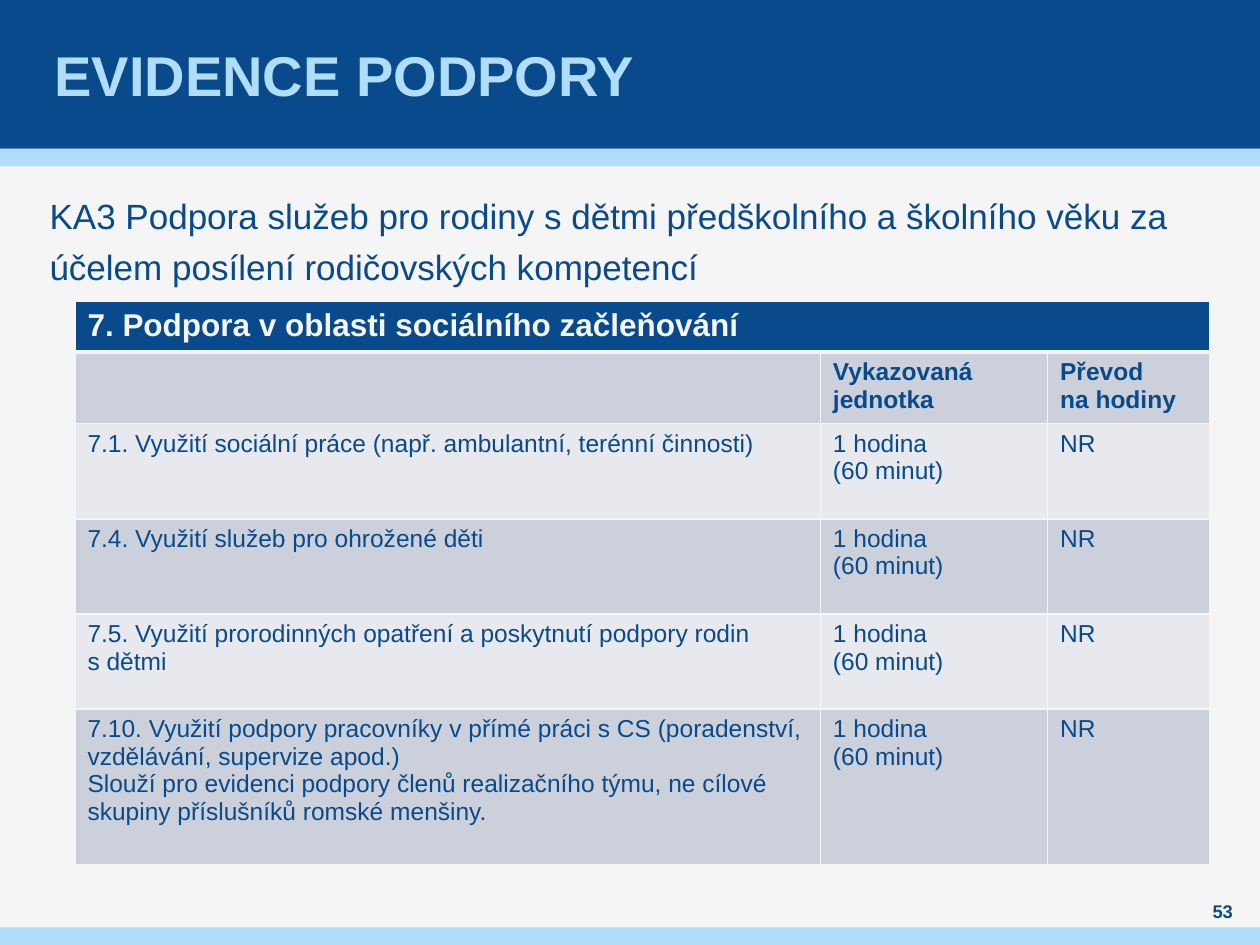
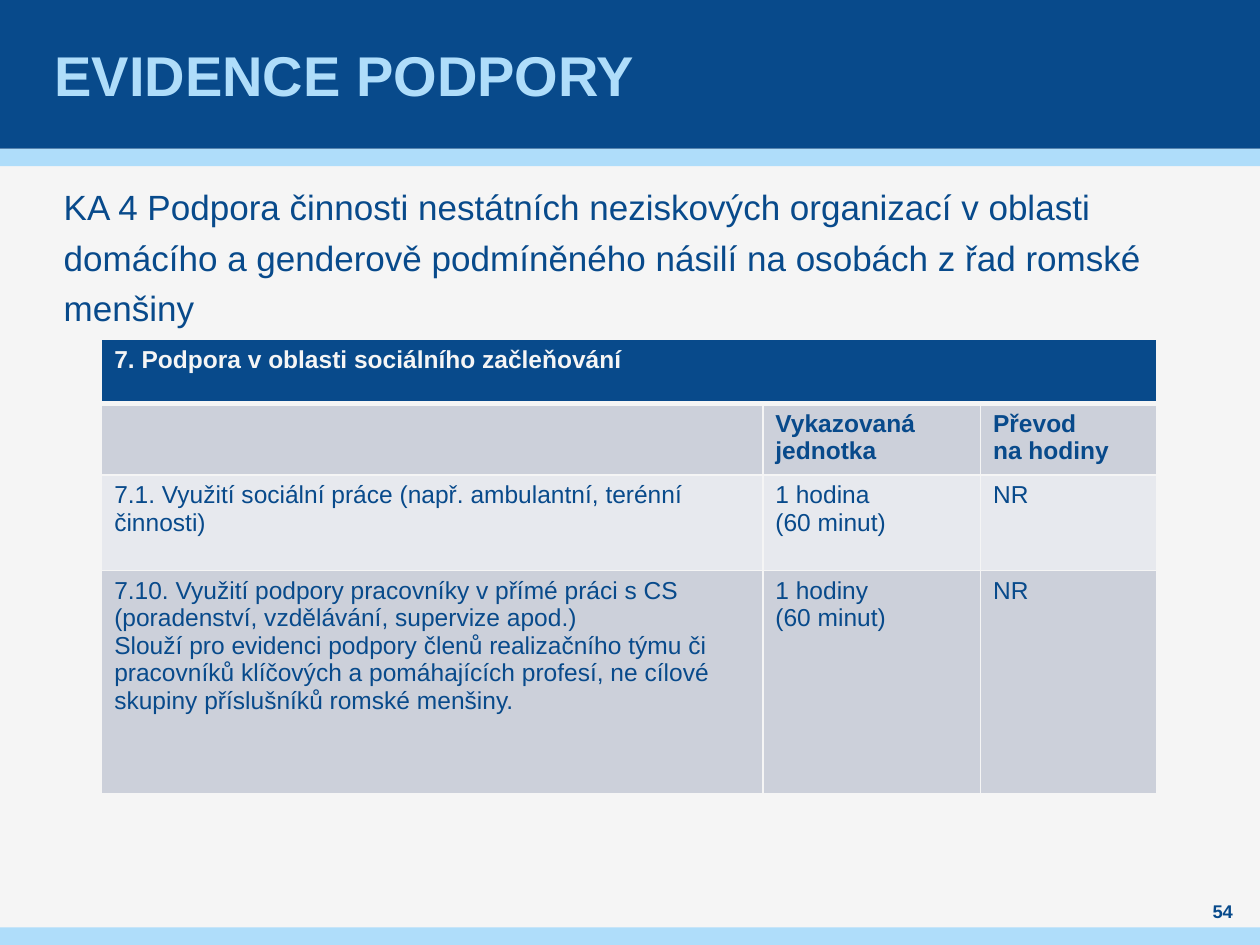
from dataclasses import dataclass

from lxml.etree import SubElement
from pptx import Presentation
from pptx.dml.color import RGBColor
from pptx.enum.shapes import MSO_SHAPE
from pptx.enum.text import MSO_ANCHOR, PP_ALIGN
from pptx.oxml.ns import qn
from pptx.util import Pt


@dataclass(frozen=True)
class Theme:
    navy: str = "084A8B"
    sky: str = "AFDDFA"
    paper: str = "F5F5F5"
    row_dark: str = "CCD0DA"
    row_light: str = "E7E9EE"
    font: str = "Arial"
    title_size: float = 32
    intro_size: float = 20
    cell_size: float = 14
    number_size: float = 10.5
    thin: float = 1
    thick: float = 3


THEME = Theme()
SLIDE_W, SLIDE_H = 720, 540
HEADER_H, STRIPE_H = 85, 10

HEADINGS = ("", "Vykazovaná jednotka", "Převod\vna hodiny")
HOUR = "1 hodina\v(60 minut)"
SUPPORT_AREA = "7. Podpora v oblasti sociálního začleňování"
SOCIAL_WORK = "7.1. Využití sociální práce (např. ambulantní, terénní činnosti)"
STAFF_SUPPORT = ("7.10. Využití podpory pracovníky v přímé práci s CS "
                 "(poradenství, vzdělávání, supervize apod.)\n"
                 "Slouží pro evidenci podpory členů realizačního týmu")

# Boxes are left, top, width; table widths and heights are per column and row
SLIDES = [
    dict(
        number=53,
        intro="KA3 Podpora služeb pro rodiny s dětmi předškolního a školního "
              "věku za účelem posílení rodičovských kompetencí",
        intro_box=(28.3, 106.5, 649.5),
        table_at=(42.8, 172.4),
        widths=(426, 129.8, 92.9),
        heights=(27, 38.6, 54.4, 54.4, 54.4, 89),
        area_size=18,
        records=[
            (SOCIAL_WORK, HOUR, "NR"),
            ("7.4. Využití služeb pro ohrožené děti", HOUR, "NR"),
            ("7.5. Využití prorodinných opatření a poskytnutí podpory rodin\v"
             "s dětmi", HOUR, "NR"),
            (STAFF_SUPPORT + ", ne cílové skupiny příslušníků romské menšiny.",
             HOUR, "NR"),
        ],
    ),
    dict(
        number=54,
        intro="KA 4 Podpora činnosti nestátních neziskových organizací v oblasti "
              "domácího a genderově podmíněného násilí na osobách z řad romské "
              "menšiny",
        intro_box=(36.4, 101.3, 641),
        table_at=(58.1, 194),
        widths=(377.8, 124.4, 100.6),
        heights=(36.7, 38.6, 54.6, 127.5),
        area_size=14,
        records=[
            (SOCIAL_WORK, HOUR, "NR"),
            (STAFF_SUPPORT + " či pracovníků klíčových a pomáhajících profesí, "
             "ne cílové skupiny příslušníků romské menšiny.",
             "1 hodiny\v(60 minut)", "NR"),
        ],
    ),
]


def color(value):
    return RGBColor.from_string(value)


def style(paragraph, size, ink, bold=False):
    font = paragraph.font
    font.name, font.size, font.bold = THEME.font, Pt(size), bold
    font.color.rgb = color(ink)


def set_margins(frame, side=0):
    frame.margin_left = frame.margin_right = Pt(side)
    frame.margin_top = frame.margin_bottom = 0


def add_text(slide, box, text):
    frame = slide.shapes.add_textbox(*map(Pt, box)).text_frame
    frame.word_wrap = True
    set_margins(frame)
    frame.text = text
    return frame


def add_band(slide, top, height, fill):
    band = slide.shapes.add_shape(MSO_SHAPE.RECTANGLE, 0, Pt(top),
                                  Pt(SLIDE_W), Pt(height))
    band.shadow.inherit = False
    band.fill.solid()
    band.fill.fore_color.rgb = color(fill)
    band.line.fill.background()


def add_frame(slide, number):
    """Background, bands, title and slide number."""
    slide.background.fill.solid()
    slide.background.fill.fore_color.rgb = color(THEME.paper)
    add_band(slide, HEADER_H, STRIPE_H, THEME.sky)
    add_band(slide, 0, HEADER_H, THEME.navy)
    add_band(slide, SLIDE_H - STRIPE_H, STRIPE_H, THEME.sky)

    # Title, brought in front of the header band
    title = slide.shapes.title
    title.element.getparent().append(title.element)
    title.left, title.top, title.width, title.height = map(
        Pt, (28.3, 0, 663, HEADER_H))
    frame = title.text_frame
    frame.text = "EVIDENCE PODPORY"
    frame.vertical_anchor = MSO_ANCHOR.MIDDLE
    set_margins(frame, 2.8)
    frame.paragraphs[0].alignment = PP_ALIGN.LEFT
    style(frame.paragraphs[0], THEME.title_size, THEME.sky, bold=True)

    # Slide number
    frame = add_text(slide, (680.3, 513.3, 36.9, 14.2), str(number))
    frame.vertical_anchor = MSO_ANCHOR.MIDDLE
    frame.paragraphs[0].alignment = PP_ALIGN.CENTER
    style(frame.paragraphs[0], THEME.number_size, THEME.navy, bold=True)


def add_intro(slide, box, text):
    paragraph = add_text(slide, box, text).paragraphs[0]
    paragraph.line_spacing = Pt(28.8)
    paragraph.space_before = paragraph.space_after = Pt(6)
    style(paragraph, THEME.intro_size, THEME.navy)


def set_borders(cell, top, bottom):
    properties = cell._tc.get_or_add_tcPr()
    sides = dict(lnL=THEME.thin, lnR=THEME.thin, lnT=top, lnB=bottom)
    for side, width in sides.items():
        line = SubElement(properties, qn(f"a:{side}"), w=str(Pt(width)))
        SubElement(SubElement(line, qn("a:solidFill")), qn("a:srgbClr"),
                   val=THEME.paper)


def add_record_table(slide, at, widths, heights, area_size, records):
    rows = [(SUPPORT_AREA, "", ""), HEADINGS, *records]
    box = (*at, sum(widths), sum(heights))
    table = slide.shapes.add_table(len(rows), len(widths),
                                   *map(Pt, box)).table
    table.first_row = table.horz_banding = False
    for column, width in zip(table.columns, widths):
        column.width = Pt(width)
    for row, height in zip(table.rows, heights):
        row.height = Pt(height)

    for r, texts in enumerate(rows):
        is_area = r == 0
        fill = (THEME.navy if is_area
                else THEME.row_dark if r % 2 else THEME.row_light)
        for c, text in enumerate(texts):
            cell = table.cell(r, c)
            set_borders(cell, top=THEME.thick if r == 1 else THEME.thin,
                        bottom=THEME.thick if is_area else THEME.thin)
            cell.fill.solid()
            cell.fill.fore_color.rgb = color(fill)
            cell.text = text
            for paragraph in cell.text_frame.paragraphs:
                style(paragraph, area_size if is_area else THEME.cell_size,
                      THEME.paper if is_area else THEME.navy, bold=r < 2)
    table.cell(0, 0).merge(table.cell(0, len(widths) - 1))


def add_record_slide(deck, number, intro, intro_box, table_at, widths, heights,
                     area_size, records):
    slide = deck.slides.add_slide(deck.slide_layouts[5])
    add_frame(slide, number)
    intro_height = table_at[1] - intro_box[1]
    add_intro(slide, (*intro_box, intro_height), intro)
    add_record_table(slide, table_at, widths, heights, area_size, records)


def main():
    deck = Presentation()
    deck.slide_width, deck.slide_height = Pt(SLIDE_W), Pt(SLIDE_H)
    for content in SLIDES:
        add_record_slide(deck, **content)
    deck.save("out.pptx")


if __name__ == "__main__":
    main()
